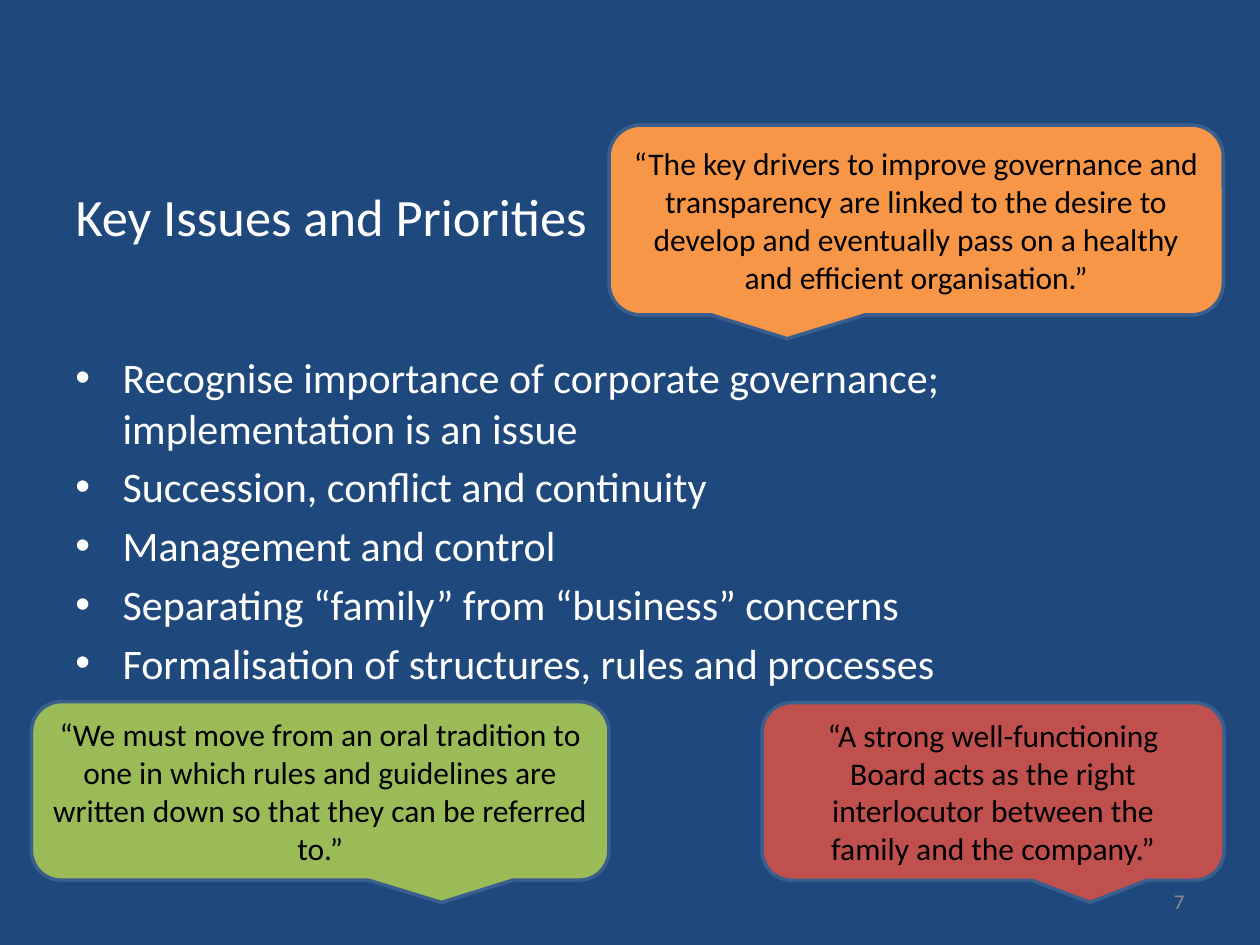
from pptx import Presentation
from pptx.dml.color import RGBColor
from pptx.enum.shapes import MSO_SHAPE as Shape
from pptx.enum.text import MSO_ANCHOR as Anchor, PP_ALIGN as Align
from pptx.oxml.ns import qn
from pptx.util import Pt
from lxml.etree import SubElement

# Content
TITLE = "Key Issues and Priorities"
ISSUES = [
    "Recognise importance of corporate governance;\vimplementation is an issue",
    "Succession, conflict and continuity",
    "Management and control",
    "Separating “family” from “business” concerns",
    "Formalisation of structures, rules and processes",
]
PAGE_NUMBER = "7"
# Quotes: fill, box (left, top, width, height), tail direction, paragraphs
QUOTES = [
    ("orange", (348, 71.5, 351, 108.5), -1, [
        "“The key drivers to improve governance and",
        "transparency are linked to the desire to develop and eventually "
        "pass on a healthy and efficient organisation.”"]),
    ("green", (18, 401, 330, 102), 1, [
        "“We must move from an oral tradition to one in which rules and "
        "guidelines are written down so that they can be referred to.”"]),
    ("red", (435.5, 401.5, 264, 101.5), 1, [
        "“A strong well-functioning",
        "Board acts as the right",
        "interlocutor between the",
        "family and the company.”"]),
]
THEME = {
    "font": "Calibri",
    "colours": {"background": "1F497D", "text": "FFFFFF", "quote": "000000",
                "number": "8C8C8C", "outline": "3A5F8C",
                "orange": "F79646", "green": "9BBB59", "red": "C0504D"},
    "sizes": {"title": 30, "text": 24, "quote": 18, "number": 12},
}
BULLET_INDENT = 27
TAIL_OFFSET = 0.21  # share of the quote's width from its centre


def colour(name):
    return RGBColor.from_string(THEME["colours"][name])


def place(item, box):
    item.left, item.top, item.width, item.height = map(Pt, box)


def write(frame, paragraphs, size, tone, align, anchor):
    frame.word_wrap = True
    frame.vertical_anchor = anchor
    frame.text = "\n".join(paragraphs)
    for paragraph in frame.paragraphs:
        paragraph.alignment = align
        for run in paragraph.runs:
            run.font.name = THEME["font"]
            run.font.size = Pt(THEME["sizes"][size])
            run.font.color.rgb = colour(tone)


def add_bullet(paragraph):
    properties = paragraph._p.get_or_add_pPr()
    properties.set("marL", str(Pt(BULLET_INDENT)))
    properties.set("indent", str(-Pt(BULLET_INDENT)))
    SubElement(properties, qn("a:buFont")).set("typeface", "Arial")
    SubElement(properties, qn("a:buChar")).set("char", "•")


deck = Presentation()
deck.slide_width, deck.slide_height = Pt(720), Pt(540)
slide = deck.slides.add_slide(deck.slide_layouts[5])
slide.background.fill.solid()
slide.background.fill.fore_color.rgb = colour("background")

# Title
title = slide.shapes.title
place(title, (36, 78, 666, 90))
write(title.text_frame, [TITLE], "title", "text", Align.LEFT, Anchor.MIDDLE)

# Bulleted issues
issues = slide.shapes.add_textbox(*map(Pt, (36, 197.5, 678, 200)))
write(issues.text_frame, ISSUES, "text", "text", Align.LEFT, Anchor.TOP)
for index, issue in enumerate(issues.text_frame.paragraphs):
    add_bullet(issue)
    if index:
        issue.space_before = Pt(4.8)

# Page number
number = slide.shapes.add_textbox(*map(Pt, (516, 500.5, 168, 28.5)))
write(number.text_frame, [PAGE_NUMBER], "number", "number", Align.RIGHT, Anchor.MIDDLE)

# Quotes
for fill, box, direction, paragraphs in QUOTES:
    quote = slide.shapes.add_shape(Shape.ROUNDED_RECTANGULAR_CALLOUT, *map(Pt, box))
    quote.adjustments[0] = direction * TAIL_OFFSET
    quote.shadow.inherit = False
    quote.fill.solid()
    quote.fill.fore_color.rgb = colour(fill)
    quote.line.color.rgb = colour("outline")
    quote.line.width = Pt(2)
    write(quote.text_frame, paragraphs, "quote", "quote", Align.CENTER, Anchor.MIDDLE)

deck.save("out.pptx")
